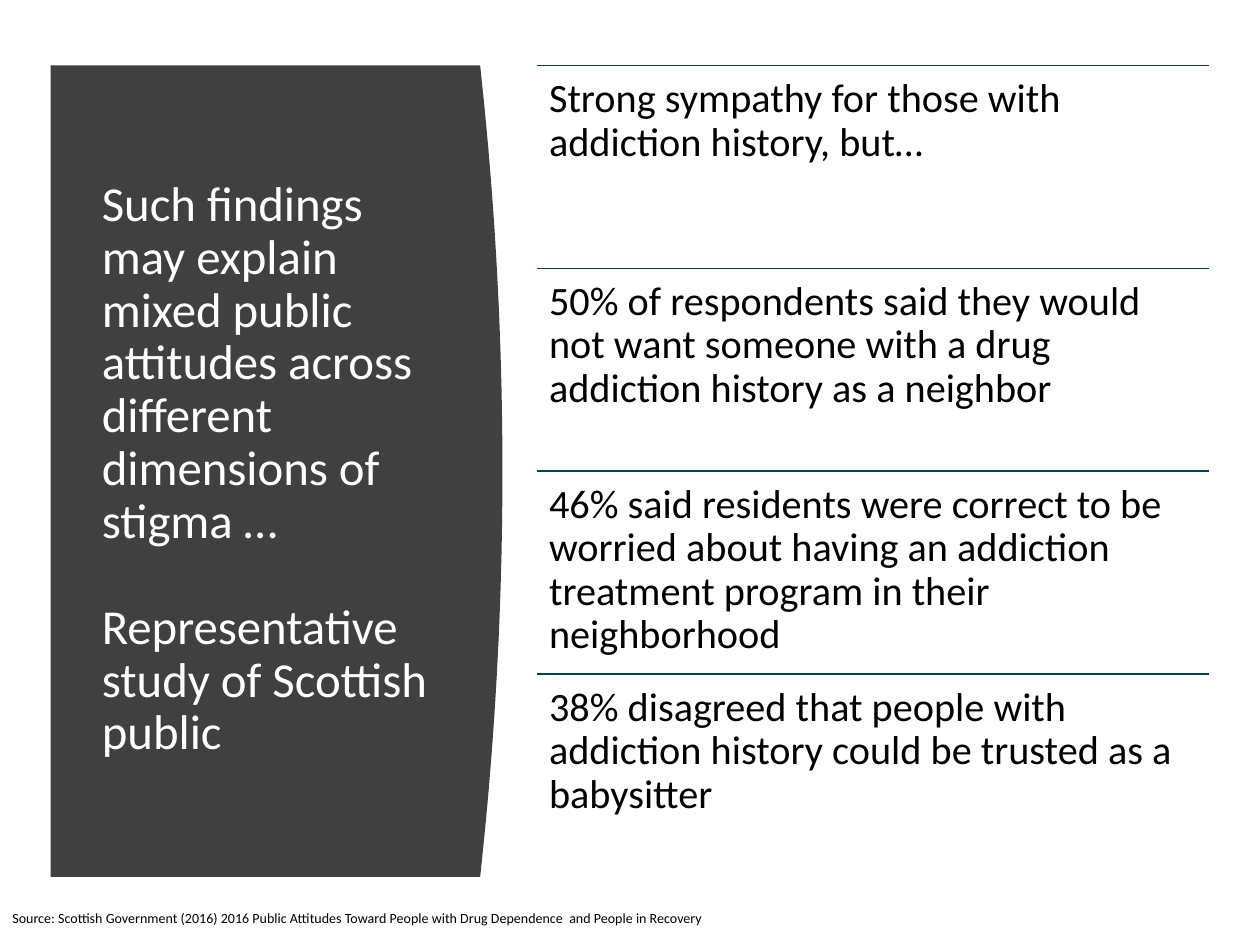
from lxml.etree import SubElement
from pptx import Presentation
from pptx.dml.color import RGBColor
from pptx.enum.shapes import MSO_CONNECTOR
from pptx.enum.text import MSO_ANCHOR, MSO_AUTO_SIZE, PP_ALIGN
from pptx.oxml.ns import qn
from pptx.util import Cm, Pt

TITLE = [
    "Such findings may explain mixed public attitudes across different dimensions of stigma …",
    "Representative study of Scottish public",
]
FINDINGS = [
    "Strong sympathy for those with addiction history, but…",
    "50% of respondents said they would not want someone with a drug addiction history as a neighbor",
    "46% said residents were correct to be worried about having an addiction treatment program in their neighborhood",
    "38% disagreed that people with addiction history could be trusted as a babysitter",
]
SOURCE = ("Source: Scottish Government (2016) 2016 Public Attitudes Toward People "
          "with Drug Dependence  and People in Recovery")

CHARCOAL = RGBColor(0x40, 0x40, 0x40)
TEAL = RGBColor(0x00, 0x42, 0x50)
WHITE = RGBColor(0xFF, 0xFF, 0xFF)
BLACK = RGBColor(0x00, 0x00, 0x00)

TITLE_FONT = {"name": "Calibri", "size": Pt(27.9)}
FINDING_FONT = {"name": "Calibri", "size": Pt(23)}
SOURCE_FONT = {"name": "Calibri", "size": Pt(8)}

TOP, HEIGHT = 1.32, 16.36
PANEL_LEFT, PANEL_RIGHT, BULGE = 1.02, 9.68, 0.45
CURVE_STEPS = 40
LIST_LEFT, LIST_WIDTH = 10.82, 13.56
ROW_HEIGHT = HEIGHT / len(FINDINGS)


def write_text(shape, texts, font, color, gap=0, inset=None):
    frame = shape.text_frame
    frame.word_wrap = True
    frame.auto_size = MSO_AUTO_SIZE.NONE
    if inset is not None:
        for side in ("left", "top", "right", "bottom"):
            setattr(frame, f"margin_{side}", Cm(inset))
    for index, text in enumerate(texts):
        paragraph = frame.add_paragraph() if index else frame.paragraphs[0]
        paragraph.text = text
        paragraph.alignment = PP_ALIGN.LEFT
        paragraph.line_spacing = 0.9
        paragraph.space_before = Pt(gap if index else 0)
        for name, value in font.items():
            setattr(paragraph.font, name, value)
        paragraph.font.color.rgb = color


def add_panel(slide):
    builder = slide.shapes.build_freeform(Cm(PANEL_LEFT), Cm(TOP))
    curve = []
    for step in range(CURVE_STEPS + 1):
        fraction = step / CURVE_STEPS
        bulge = BULGE * (1 - (2 * fraction - 1) ** 2)
        curve.append((Cm(PANEL_RIGHT + bulge), Cm(TOP + HEIGHT * fraction)))
    builder.add_line_segments(curve + [(Cm(PANEL_LEFT), Cm(TOP + HEIGHT))], close=True)
    panel = builder.convert_to_shape()
    panel.shadow.inherit = False
    panel.fill.solid()
    panel.fill.fore_color.rgb = CHARCOAL
    panel.line.fill.background()
    slide.shapes.title.element.addprevious(panel.element)


def add_title(slide):
    title = slide.shapes.title
    title.left, title.top, title.width, title.height = Cm(1.8), Cm(2.82), Cm(7.11), Cm(13.31)
    title.text_frame.vertical_anchor = MSO_ANCHOR.MIDDLE
    write_text(title, TITLE, TITLE_FONT, WHITE, gap=30.6)


def add_findings(slide):
    shapes = slide.shapes.add_group_shape().shapes
    for index, finding in enumerate(FINDINGS):
        top = Cm(TOP + index * ROW_HEIGHT)
        rule = shapes.add_connector(
            MSO_CONNECTOR.STRAIGHT, Cm(LIST_LEFT), top, Cm(LIST_LEFT + LIST_WIDTH), top)
        rule.line.color.rgb = TEAL
        rule.line.width = Pt(1)
        SubElement(rule.element.spPr, qn("a:effectLst"))
        box = shapes.add_textbox(Cm(LIST_LEFT), top, Cm(LIST_WIDTH), Cm(ROW_HEIGHT))
        write_text(box, [finding], FINDING_FONT, BLACK, inset=0.25)


def main():
    presentation = Presentation()
    presentation.slide_width, presentation.slide_height = Cm(25.4), Cm(19.05)
    slide = presentation.slides.add_slide(presentation.slide_layouts[5])
    add_panel(slide)
    add_title(slide)
    add_findings(slide)
    source = slide.shapes.add_textbox(Cm(0), Cm(18.24), Cm(18.9), Cm(0.99))
    write_text(source, [SOURCE], SOURCE_FONT, BLACK)
    presentation.save("out.pptx")


if __name__ == "__main__":
    main()
